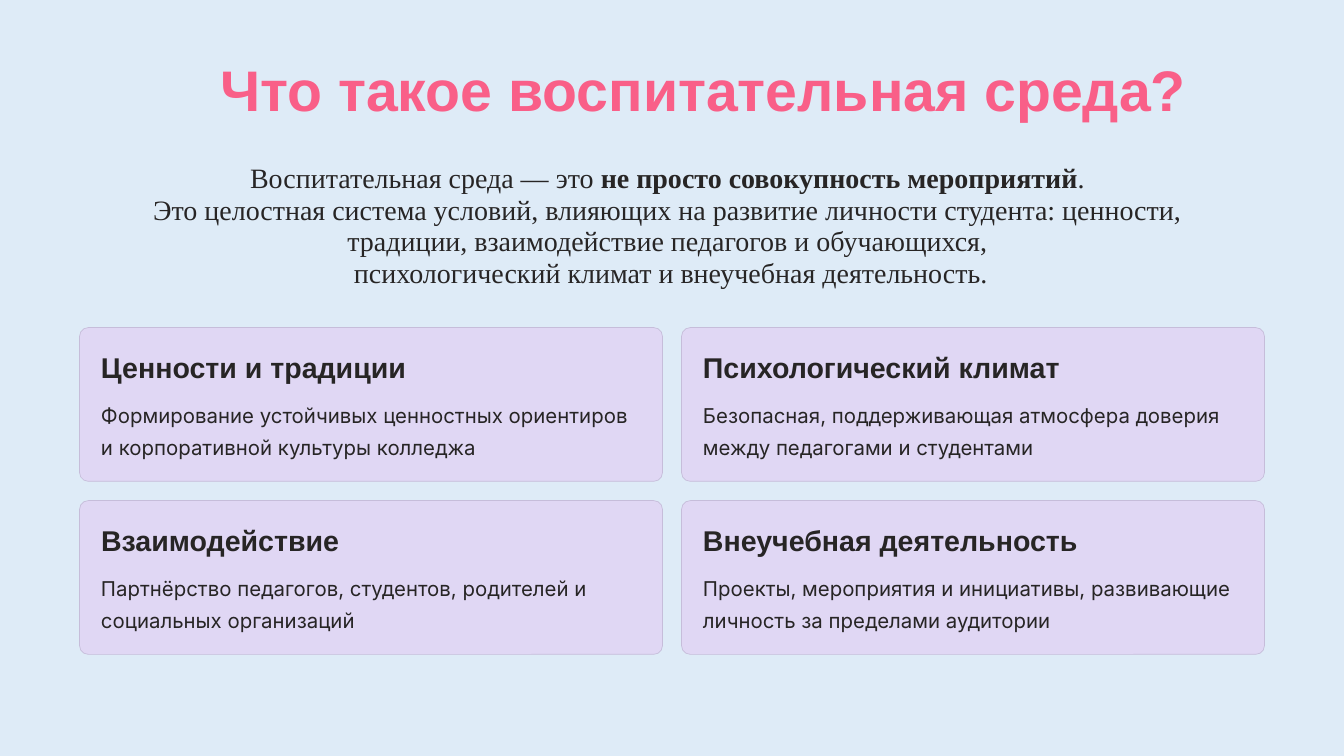
"""Builds the slide about the educational environment."""
from pptx import Presentation
from pptx.dml.color import RGBColor
from pptx.enum.shapes import MSO_SHAPE
from pptx.enum.text import PP_ALIGN
from pptx.util import Pt

BACKGROUND = RGBColor(0xDE, 0xEB, 0xF7)
PINK = RGBColor(0xF9, 0x5F, 0x88)
INK = RGBColor(0x27, 0x25, 0x25)
LILAC = RGBColor(0xE0, 0xD7, 0xF4)
LILAC_EDGE = RGBColor(0xC6, 0xBD, 0xDA)

CARD_LEFT, CARD_TOP = 68.2, 280.8
CARD_WIDTH, CARD_HEIGHT = 499.7, 131.8
COLUMN_STEP, ROW_STEP = 516, 148.3
PADDING = 18.4
BODY_OFFSET = 59

INTRO = [
    [("Воспитательная среда — это ", False),
     ("не просто совокупность мероприятий", True), (". ", False)],
    [("Это целостная система условий, влияющих на развитие личности студента: ценности, ", False)],
    [("традиции, взаимодействие педагогов и обучающихся, ", False)],
    [("психологический климат и внеучебная деятельность.", False)],
]
CARDS = [
    ("Ценности и традиции", 283,
     "Формирование устойчивых ценностных ориентиров и корпоративной культуры колледжа"),
    ("Психологический климат", 335,
     "Безопасная, поддерживающая атмосфера доверия между педагогами и студентами"),
    ("Взаимодействие", 245,
     "Партнёрство педагогов, студентов, родителей и социальных организаций"),
    ("Внеучебная деятельность", 335,
     "Проекты, мероприятия и инициативы, развивающие личность за пределами аудитории"),
]


def add_text(s, box, paragraphs, font, size, spacing, color=INK,
             align=PP_ALIGN.LEFT, wrap=True):
    """Add a text box without margins from paragraphs of (text, bold) runs."""
    tf = s.shapes.add_textbox(*map(Pt, box)).text_frame
    tf.word_wrap = wrap
    tf.margin_left = tf.margin_top = tf.margin_right = tf.margin_bottom = 0
    for i, runs in enumerate(paragraphs):
        p = tf.add_paragraph() if i else tf.paragraphs[0]
        p.alignment = align
        p.line_spacing = Pt(spacing)
        for text, bold in runs:
            r = p.add_run()
            r.text = text
            r.font.name = font
            r.font.size = Pt(size)
            r.font.bold = bold
            r.font.color.rgb = color


def add_card(s, left, top, heading, heading_width, body):
    """Add a rounded card with a heading and a description."""
    sp = s.shapes.add_shape(MSO_SHAPE.ROUNDED_RECTANGLE, Pt(left), Pt(top),
                            Pt(CARD_WIDTH), Pt(CARD_HEIGHT))
    sp.adjustments[0] = 0.057
    sp.shadow.inherit = False
    sp.fill.solid()
    sp.fill.fore_color.rgb = LILAC
    sp.line.color.rgb = LILAC_EDGE
    sp.line.width = Pt(0.6)
    text_left = left + PADDING
    add_text(s, (text_left, top + PADDING, heading_width, 31),
             [[(heading, True)]], "Arial", 24.5, 30.5, wrap=False)
    add_text(s, (text_left, top + BODY_OFFSET, CARD_WIDTH - 2 * PADDING, 54.7),
             [[(body, False)]], "Inter", 17.5, 27)


def main():
    """Build and save the slide."""
    prs = Presentation()
    prs.slide_width, prs.slide_height = Pt(1152), Pt(648)
    s = prs.slides.add_slide(prs.slide_layouts[6])
    s.background.fill.solid()
    s.background.fill.fore_color.rgb = BACKGROUND
    add_text(s, (172.8, 44.6, 859.7, 61.2),
             [[("Что такое воспитательная среда?", True)]],
             "Arial", 49, 61, PINK, PP_ALIGN.CENTER, wrap=False)
    add_text(s, (67, 139.7, 1015.9, 114.5), INTRO, "Times New Roman", 24, 27,
             align=PP_ALIGN.CENTER)
    for i, card in enumerate(CARDS):
        row, column = divmod(i, 2)
        add_card(s, CARD_LEFT + column * COLUMN_STEP,
                 CARD_TOP + row * ROW_STEP, *card)
    prs.save("out.pptx")


if __name__ == "__main__":
    main()
